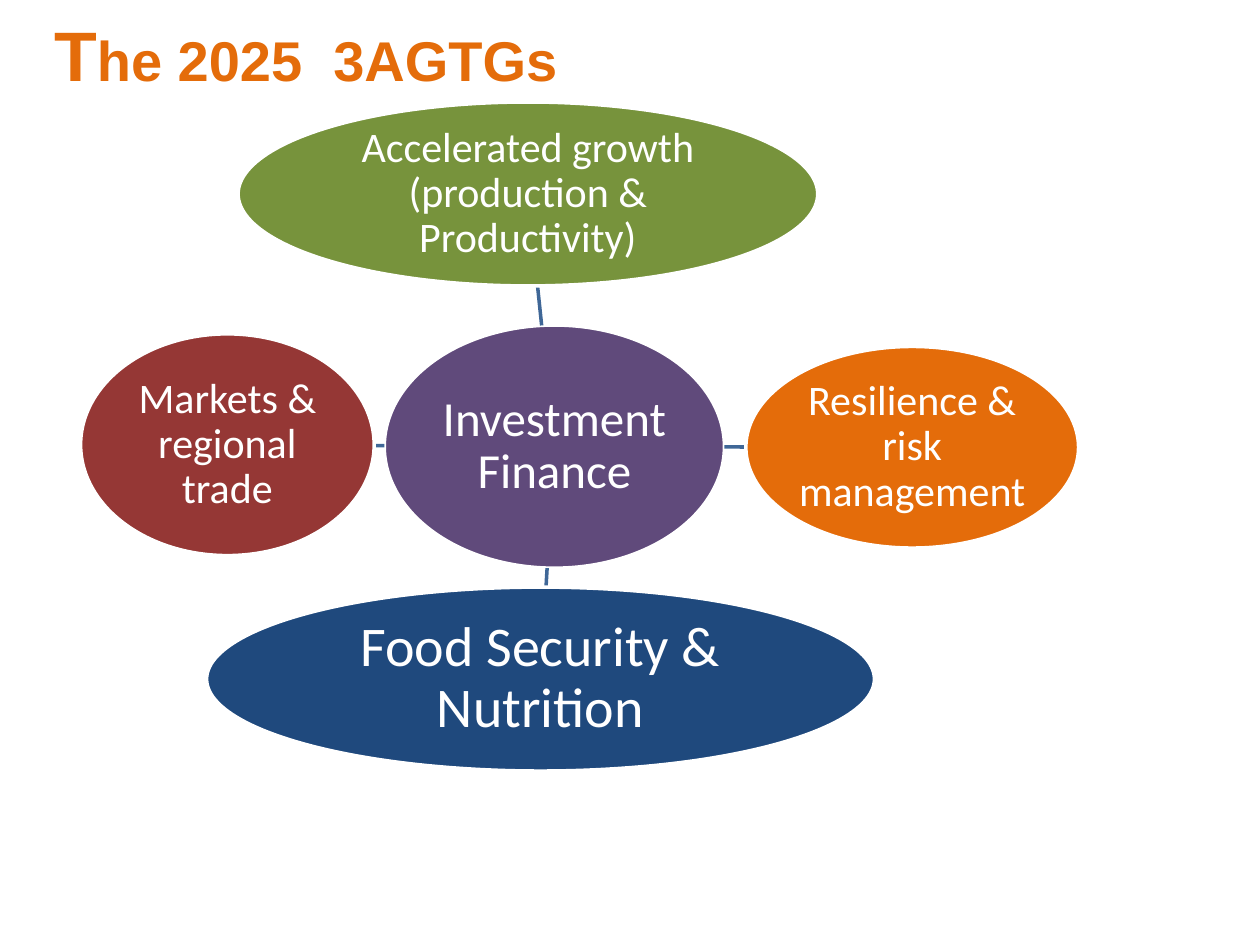
"""Build the 2025 3AGTGs hub-and-spoke slide."""
from math import hypot

from lxml.etree import SubElement
from pptx import Presentation
from pptx.dml.color import RGBColor
from pptx.enum.shapes import MSO_CONNECTOR as Connector, MSO_SHAPE as Shape
from pptx.enum.text import MSO_ANCHOR as Anchor, MSO_AUTO_SIZE as AutoSize, PP_ALIGN as Align
from pptx.oxml.ns import qn
from pptx.util import Inches, Pt

TITLE_RUNS = [("T", 40), ("he 2025  3AGTGs", 32)]
TITLE_BOX = (0.33, 0.17, 8.92, 0.64)
HUB = ("Investment Finance", (3.05, 2.58, 2.7, 1.93), "604A7B", 28)
GOALS = [
    ("Accelerated growth (production & Productivity)", (1.89, 0.81, 4.6, 1.46), "77933C", 24),
    ("Resilience & risk management", (5.92, 2.75, 2.64, 1.6), "E46C0A", 24),
    ("Food Security & Nutrition", (1.64, 4.66, 5.3, 1.46), "1F497D", 32),
    ("Markets & regional trade", (0.64, 2.65, 2.33, 1.76), "953735", 24),
]
WHITE, ORANGE, SPOKE_BLUE = "FFFFFF", "E46C0A", "3F6797"


def color(hex_code):
    return RGBColor.from_string(hex_code)


def apply(target, formats):
    for name, value in formats.items():
        setattr(target, name, value)


def style_font(font, face, size, hex_code, bold=False):
    apply(font, {"name": face, "size": Pt(size), "bold": bold})
    font.color.rgb = color(hex_code)


def style_line(line, hex_code):
    line.color.rgb = color(hex_code)
    line.width = Pt(2)


def add_title(slide):
    title = slide.shapes.title
    apply(title, dict(zip(("left", "top", "width", "height"), map(Inches, TITLE_BOX))))
    frame = title.text_frame
    apply(frame, {"word_wrap": True, "vertical_anchor": Anchor.TOP,
                  "auto_size": AutoSize.SHAPE_TO_FIT_TEXT})
    heading = frame.paragraphs[0]
    apply(heading, {"alignment": Align.LEFT, "line_spacing": 0.8})
    for text, size in TITLE_RUNS:
        run = heading.add_run()
        run.text = text
        style_font(run.font, "Arial", size, ORANGE, bold=True)


def add_ellipse(slide, label, box, fill, size):
    ellipse = slide.shapes.add_shape(Shape.OVAL, *map(Inches, box))
    ellipse.shadow.inherit = False
    ellipse.fill.solid()
    ellipse.fill.fore_color.rgb = color(fill)
    style_line(ellipse.line, WHITE)
    frame = ellipse.text_frame
    margins = ("margin_left", "margin_top", "margin_right", "margin_bottom")
    apply(frame, {**dict.fromkeys(margins, Inches(0.02)),
                  "word_wrap": True, "vertical_anchor": Anchor.MIDDLE})
    paragraph = frame.paragraphs[0]
    paragraph.text = label
    apply(paragraph, {"alignment": Align.CENTER, "line_spacing": 0.9})
    style_font(paragraph.font, "Calibri", size, WHITE)


def center(box):
    left, top, width, height = box
    return left + width / 2, top + height / 2


def edge_point(box, toward):
    """Return where the line from the ellipse centre to a point leaves the ellipse."""
    x, y = center(box)
    dx, dy = toward[0] - x, toward[1] - y
    scale = 1 / hypot(dx / (box[2] / 2), dy / (box[3] / 2))
    return x + dx * scale, y + dy * scale


def add_spoke(slide, hub_box, goal_box):
    start = edge_point(hub_box, center(goal_box))
    end = edge_point(goal_box, center(hub_box))
    spoke = slide.shapes.add_connector(Connector.STRAIGHT, *map(Inches, start + end))
    style_line(spoke.line, SPOKE_BLUE)
    SubElement(spoke._element.spPr, qn("a:effectLst"))


def main():
    deck = Presentation()
    apply(deck, {"slide_width": Inches(10), "slide_height": Inches(7.5)})
    slide = deck.slides.add_slide(deck.slide_layouts[5])
    add_title(slide)
    add_ellipse(slide, *HUB)
    for goal in GOALS:
        add_spoke(slide, HUB[1], goal[1])
        add_ellipse(slide, *goal)
    deck.save("out.pptx")


if __name__ == "__main__":
    main()
